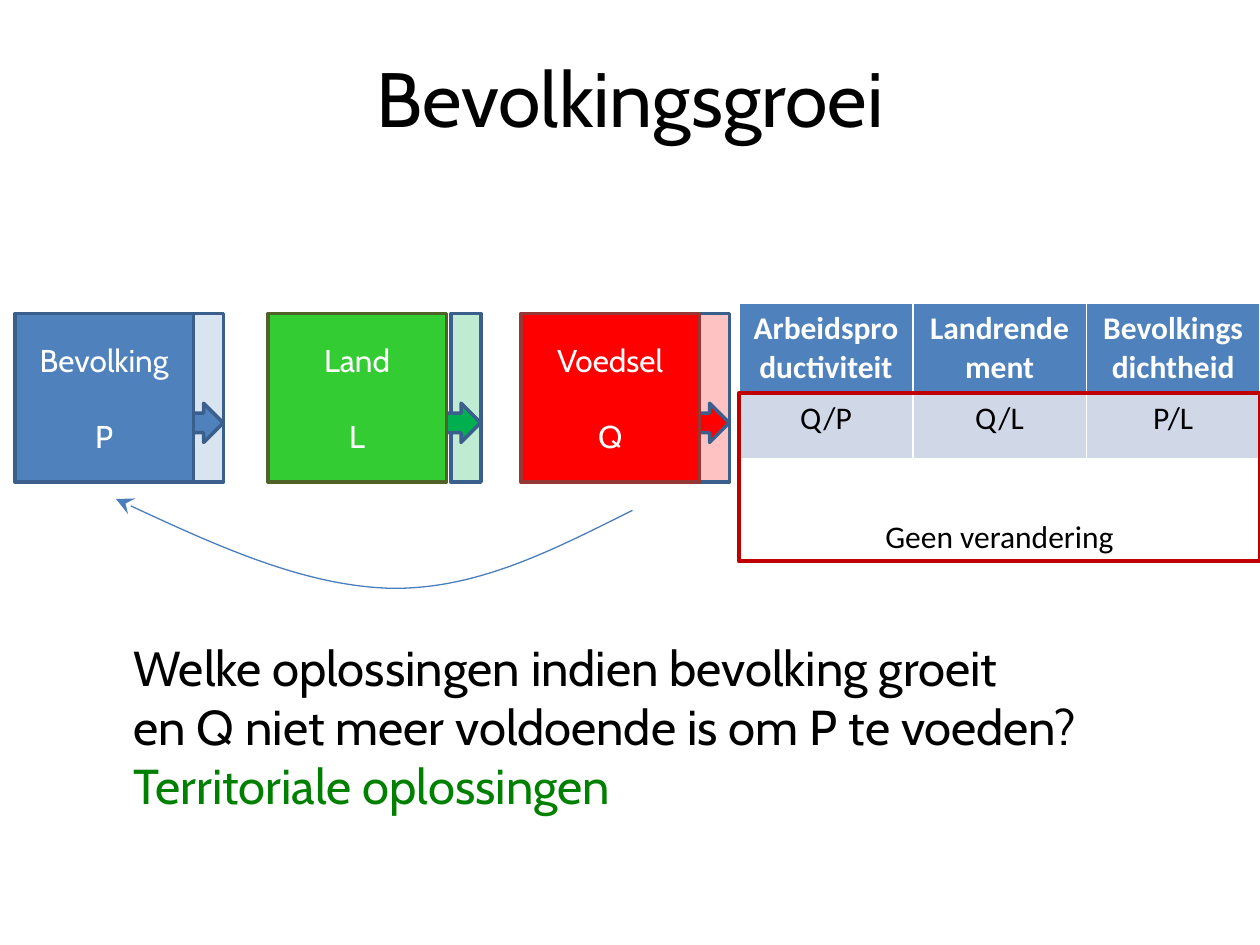
from lxml.etree import SubElement as Sub
from pptx import Presentation
from pptx.dml.color import RGBColor
from pptx.enum.shapes import MSO_SHAPE as Kind
from pptx.enum.text import MSO_ANCHOR as Anchor, PP_ALIGN as Align
from pptx.oxml.ns import qn
from pptx.util import Cm, Pt


def paint(target, color):
    """Give a fill or line a solid colour."""
    target.solid()
    target.fore_color.rgb = RGBColor.from_string(color)


def style(para, size, color, font="Cabin", align=Align.CENTER, bold=False):
    para.alignment = align
    para.font.size, para.font.name, para.font.bold = Pt(size), font, bold
    para.font.color.rgb = RGBColor.from_string(color)


prs = Presentation()
prs.slide_width, prs.slide_height = Cm(25.4), Cm(19.05)
slide = prs.slides.add_slide(prs.slide_layouts[5])
shapes = slide.shapes

# Title
title = shapes.title
title.left, title.top, title.width, title.height = Cm(1.9), Cm(0.36), Cm(21.6), Cm(3.18)
title.text_frame.text = "Bevolkingsgroei"
title.text_frame.vertical_anchor = Anchor.MIDDLE
style(title.text_frame.paragraphs[0], 44, "000000")

# Curved feedback arrow: a start point, then three points per Bézier segment
points = [(12.75, 10.29), (11.18, 11.07), (9.63, 11.89), (7.87, 11.86),
          (6.15, 11.81), (4.24, 10.95), (2.34, 10.06)]
start, *rest = [(Cm(x), Cm(y)) for x, y in points]
pen = shapes.build_freeform(*start)
pen.add_line_segments(rest, close=False)
curve = pen.convert_to_shape()
curve.shadow.inherit = False
curve.fill.background()
paint(curve.line.fill, "4B7EBC")
curve.line.width = Pt(0.75)
steps = curve.element.xpath(".//a:lnTo")
outline = steps[0].getparent()
for i in range(0, len(steps), 3):
    bend = Sub(outline, qn("a:cubicBezTo"))
    for step in steps[i:i + 3]:
        bend.append(step[0])
        outline.remove(step)
Sub(curve.line.fill._xPr, qn("a:tailEnd"), type="stealth", w="lg", len="lg")

# Ratio table
heads = ["Arbeidsproductiviteit", "Landrendement", "Bevolkingsdichtheid"]
ratios = ["Q/P", "Q/L", "P/L"]
table = shapes.add_table(2, 3, Cm(14.9), Cm(6.12), Cm(10.5), Cm(3.12)).table
table.rows[0].height, table.rows[1].height = Cm(1.8), Cm(1.32)
rows = [(heads, "4F81BD", "FFFFFF", True), (ratios, "D0D8E8", "000000", False)]
for r, (words, back, ink, bold) in enumerate(rows):
    for c, word in enumerate(words):
        cell = table.cell(r, c)
        cell.text = word
        paint(cell.fill, back)
        style(cell.text_frame.paragraphs[0], 18, ink, "Calibri", bold=bold)

# Red frame around the ratios
frame = shapes.add_shape(Kind.RECTANGLE, Cm(14.9), Cm(7.92), Cm(10.5), Cm(3.4))
frame.shadow.inherit = False
frame.fill.background()
paint(frame.line.fill, "C00000")
frame.line.width = Pt(2.25)
frame.text_frame.text = "Geen verandering"
frame.text_frame.vertical_anchor = Anchor.BOTTOM
style(frame.text_frame.paragraphs[0], 18, "000000", "Calibri")

# Question and answer
note = shapes.add_textbox(Cm(2.44), Cm(12.73), Cm(20.62), Cm(3.84)).text_frame
note.word_wrap = False
note.text = ("Welke oplossingen indien bevolking groeit \v"
             "en Q niet meer voldoende is om P te voeden?\n"
             "Territoriale oplossingen")
for para, ink in zip(note.paragraphs, ["000000", "008000"]):
    style(para, 28, ink, align=Align.LEFT)

# Growing blocks: pale strip, arrow, then the block over the arrow's tail
EDGE = "3A5F8C"
top, wide, high, pitch = 6.32, 3.6, 3.4, 5.1
blocks = [("Bevolking", "P", "4F81BD", EDGE, "4F81BD", 21, 0),
          ("Land", "L", "33CC33", "4F6228", "00B050", 25, 0.09),
          ("Voedsel", "Q", "FF0000", "953735", "FF0000", 24, 0)]
for i, (name, sign, color, edge, grow, alpha, gap) in enumerate(blocks):
    left = 0.3 + i * pitch
    side = left + wide + gap
    parts = [(Kind.RECTANGLE, side, top, 0.61, high, grow, EDGE),
             (Kind.RIGHT_ARROW, side - 0.6, 8.13, 1.2, 0.79, grow, EDGE),
             (Kind.RECTANGLE, left, top, wide, high, color, edge)]
    made = []
    for kind, x, y, w, h, fill, line in parts:
        part = shapes.add_shape(kind, Cm(x), Cm(y), Cm(w), Cm(h))
        part.shadow.inherit = False
        paint(part.fill, fill)
        paint(part.line.fill, line)
        part.line.width = Pt(2)
        made.append(part)
    strip, arrow, block = made
    tint = strip.element.spPr.find(qn("a:solidFill"))[0]
    Sub(tint, qn("a:alpha"), val=str(alpha * 1000))
    text = block.text_frame
    text.text = f"{name}\n{sign}"
    text.vertical_anchor = Anchor.MIDDLE
    for para in text.paragraphs:
        style(para, 18, "FFFFFF")
    text.paragraphs[1].space_before = Pt(22)

prs.save("out.pptx")
